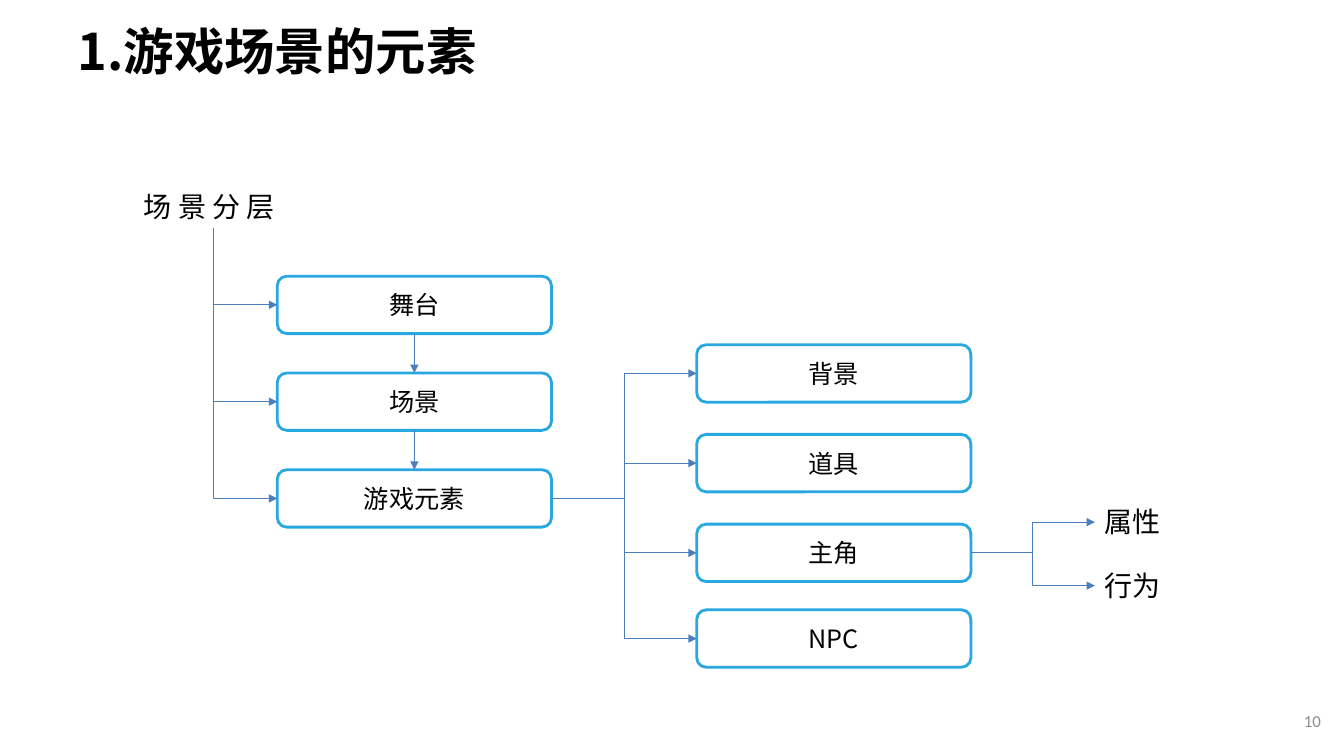
from dataclasses import dataclass

from lxml import etree
from pptx import Presentation
from pptx.dml.color import RGBColor
from pptx.enum import shapes, text
from pptx.oxml.ns import qn
from pptx.util import Inches, Pt


@dataclass(frozen=True)
class Theme:
    ink: RGBColor = RGBColor(0, 0, 0)
    page_ink: RGBColor = RGBColor(0x8C, 0x8C, 0x8C)
    box_line: RGBColor = RGBColor(0x28, 0xA7, 0xE1)
    arrow: RGBColor = RGBColor(0x4B, 0x7E, 0xBC)
    font: str = "Noto Sans CJK SC"
    page_font: str = "Calibri"
    title_size: int = 36
    label_size: int = 20
    box_size: int = 18
    page_size: int = 12


THEME = Theme()
BOX_W, BOX_H = 2.72, 0.57
LAYER_LEFT, ELEMENT_LEFT, TRAIT_LEFT = 2.75, 6.91, 10.86
LABEL_H = 0.44
TRUNK_X, TRUNK_TOP = 2.12, 2.26
LAYERS = [("舞台", 2.74), ("场景", 3.70), ("游戏元素", 4.66)]
ELEMENTS = [("背景", 3.42), ("道具", 4.31), ("主角", 5.20), ("NPC", 6.05)]
TRAITS = [("属性", 4.96), ("行为", 5.59)]


def write(frame, words, size, color=THEME.ink, font=THEME.font, bold=False,
          align=text.PP_ALIGN.LEFT, anchor=text.MSO_ANCHOR.MIDDLE, wrap=True):
    frame.word_wrap = wrap
    frame.vertical_anchor = anchor
    paragraph = frame.paragraphs[0]
    paragraph.alignment = align
    run = paragraph.add_run()
    run.text = words
    run.font.size = Pt(size)
    run.font.bold = bold
    run.font.name = font
    run.font.color.rgb = color
    east_asian = etree.SubElement(run.font._element, qn("a:ea"))
    east_asian.set("typeface", font)


def add_text(slide, words, left, top, width, height, size, **style):
    area = slide.shapes.add_textbox(*map(Inches, (left, top, width, height)))
    write(area.text_frame, words, size, **style)


def add_label(slide, words, left, top, width):
    add_text(slide, words, left, top, width, LABEL_H, THEME.label_size,
             anchor=text.MSO_ANCHOR.TOP, wrap=False)


def add_box(slide, words, left, top):
    box = slide.shapes.add_shape(shapes.MSO_SHAPE.ROUNDED_RECTANGLE,
                                 *map(Inches, (left, top, BOX_W, BOX_H)))
    box.shadow.inherit = False
    box.fill.background()
    box.line.color.rgb = THEME.box_line
    box.line.width = Pt(2)
    write(box.text_frame, words, THEME.box_size, align=text.PP_ALIGN.CENTER)
    return box


def add_arrow(slide, kind, start, end):
    arrow = slide.shapes.add_connector(kind, *map(Inches, (*start, *end)))
    arrow.line.color.rgb = THEME.arrow
    arrow.line.width = Pt(0.75)
    etree.SubElement(arrow.line._get_or_add_ln(), qn("a:tailEnd"), type="triangle")
    etree.SubElement(arrow._element.spPr, qn("a:effectLst"))
    return arrow


def add_branch(slide, start, end):
    """Arrow that runs across, along a shared upright, and across again."""
    add_arrow(slide, shapes.MSO_CONNECTOR.ELBOW, start, end)


def add_trunk_branch(slide, start, end):
    """Arrow that runs down and then right, as a quarter-turned single bend."""
    arrow = add_arrow(slide, shapes.MSO_CONNECTOR.ELBOW, start, end)
    across, down = end[0] - start[0], end[1] - start[1]
    arrow.left = Inches((start[0] + end[0] - down) / 2)
    arrow.top = Inches((start[1] + end[1] - across) / 2)
    arrow.width, arrow.height = Inches(down), Inches(across)
    properties = arrow._element.spPr
    properties.find(qn("a:prstGeom")).set("prst", "bentConnector2")
    frame = properties.find(qn("a:xfrm"))
    frame.set("rot", str(270 * 60000))
    frame.set("flipH", "1")


def add_down_arrow(slide, upper, lower):
    arrow = add_arrow(slide, shapes.MSO_CONNECTOR.STRAIGHT, (0, 0), (0, 0))
    arrow.begin_connect(upper, 2)
    arrow.end_connect(lower, 0)


def box_middle(top):
    return top + BOX_H / 2


def main():
    deck = Presentation()
    deck.slide_width, deck.slide_height = Inches(13.33), Inches(7.5)
    slide = deck.slides.add_slide(deck.slide_layouts[6])

    add_text(slide, "1.游戏场景的元素", 0.67, 0.18, 7.82, 0.64,
             THEME.title_size, bold=True)
    add_text(slide, "10", 10.09, 6.95, 3.11, 0.4, THEME.page_size,
             color=THEME.page_ink, font=THEME.page_font, align=text.PP_ALIGN.RIGHT)
    add_label(slide, "场 景 分 层", 1.33, 1.83, 1.57)

    layer_boxes = [add_box(slide, name, LAYER_LEFT, top) for name, top in LAYERS]
    for _, top in LAYERS:
        add_trunk_branch(slide, (TRUNK_X, TRUNK_TOP), (LAYER_LEFT, box_middle(top)))
    for upper, lower in zip(layer_boxes, layer_boxes[1:]):
        add_down_arrow(slide, upper, lower)

    elements_start = (LAYER_LEFT + BOX_W, box_middle(dict(LAYERS)["游戏元素"]))
    for name, top in ELEMENTS:
        add_box(slide, name, ELEMENT_LEFT, top)
        add_branch(slide, elements_start, (ELEMENT_LEFT, box_middle(top)))

    traits_start = (ELEMENT_LEFT + BOX_W, box_middle(dict(ELEMENTS)["主角"]))
    for name, top in TRAITS:
        add_label(slide, name, TRAIT_LEFT, top, 0.76)
        add_branch(slide, traits_start, (TRAIT_LEFT, top + LABEL_H / 2))

    deck.save("out.pptx")


if __name__ == "__main__":
    main()
